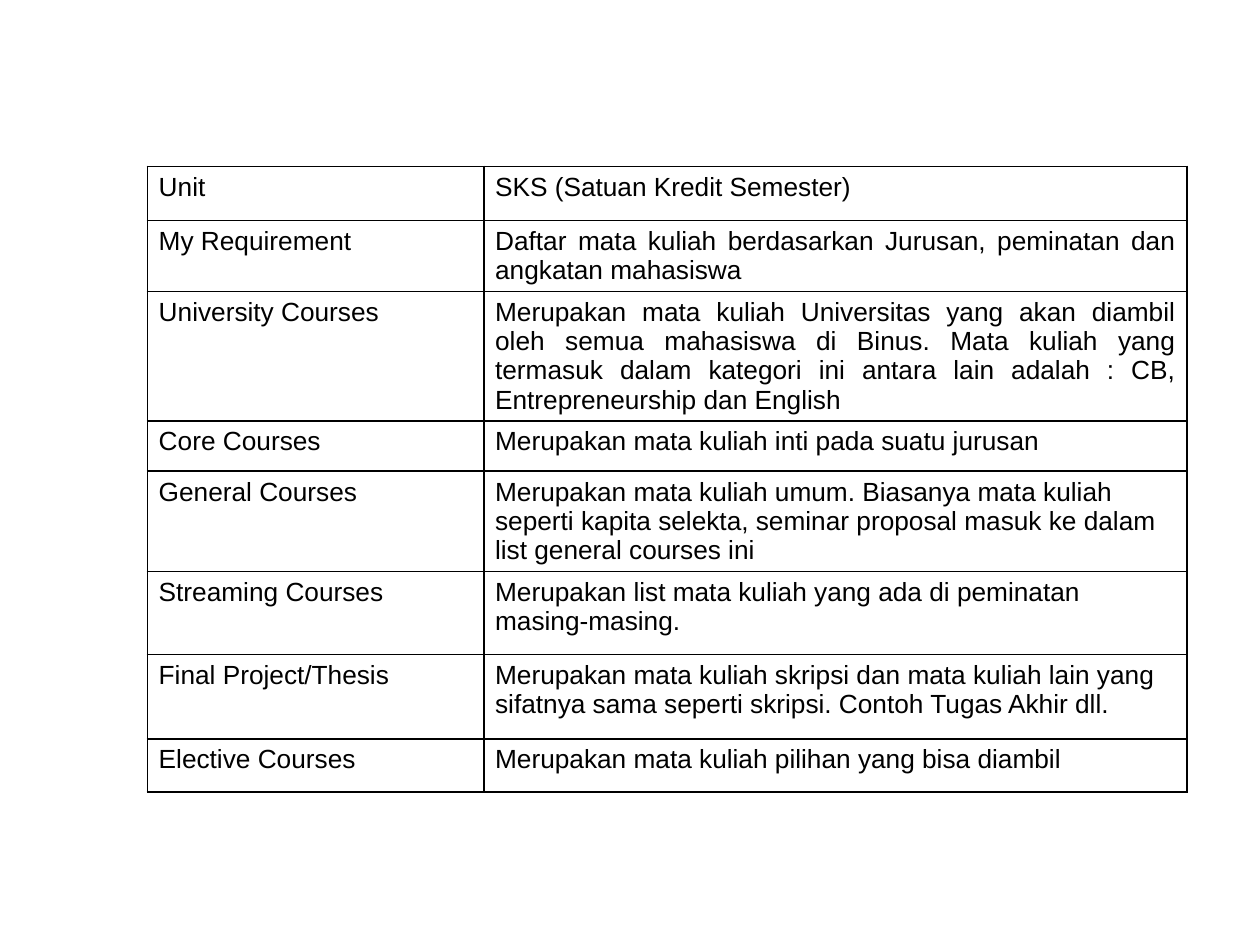
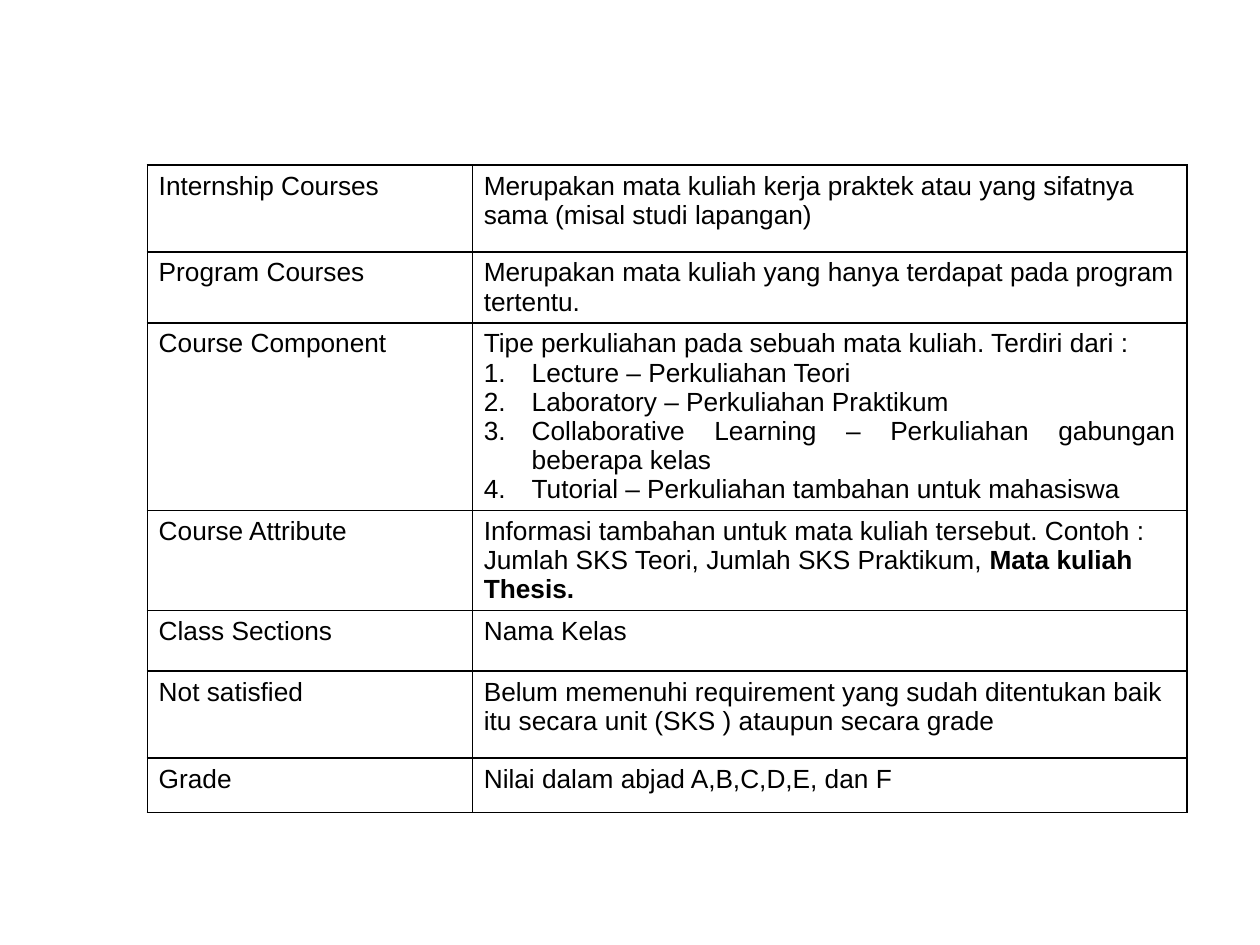
"""Builds two slides of a glossary of course registration terms."""
from lxml import etree
from pptx import Presentation
from pptx.dml.color import RGBColor
from pptx.enum.text import PP_ALIGN
from pptx.oxml.ns import qn
from pptx.util import Inches, Pt

ALIGN = {"L": PP_ALIGN.LEFT, "J": PP_ALIGN.JUSTIFY}
FONT, SIZE, INK = "Arial", 15, "000000"
LEFT, WIDTH = 1.17, 8.25


def color(code):
    return RGBColor.from_string(code)


def border(cell):
    props = cell._tc.get_or_add_tcPr()
    for side in ("lnL", "lnR", "lnT", "lnB"):
        line = etree.SubElement(props, qn("a:" + side), w=str(Pt(1)))
        fill = etree.SubElement(line, qn("a:solidFill"))
        etree.SubElement(fill, qn("a:srgbClr"), val=INK)


# Each row: height, alignment of term and meaning, term, then meaning as
# paragraphs of runs, where every second run is bold.
terms = [
    (0.43, "LL", "Unit", [["SKS (Satuan Kredit Semester)"]]),
    (0.42, "JJ", "My Requirement", [[
        "Daftar mata kuliah berdasarkan Jurusan, peminatan dan angkatan mahasiswa"]]),
    (0.67, "JJ", "University Courses", [[
        "Merupakan mata kuliah Universitas yang akan diambil oleh semua mahasiswa "
        "di Binus. Mata kuliah yang termasuk dalam kategori ini antara lain "
        "adalah : CB, Entrepreneurship dan English"]]),
    (0.4, "JJ", "Core Courses", [["Merupakan mata kuliah inti pada suatu jurusan"]]),
    (0.45, "JL", "General Courses", [[
        "Merupakan mata kuliah umum. Biasanya mata kuliah seperti kapita selekta, "
        "seminar proposal masuk ke dalam list general courses ini"]]),
    (0.66, "JL", "Streaming Courses", [[
        "Merupakan list mata kuliah yang ada di peminatan masing-masing."]]),
    (0.67, "LL", "Final Project/Thesis", [[
        "Merupakan mata kuliah skripsi dan mata kuliah lain yang sifatnya sama "
        "seperti skripsi. Contoh Tugas Akhir dll."]]),
    (0.42, "LL", "Elective Courses", [["Merupakan mata kuliah pilihan yang bisa diambil"]]),
]
more = [
    (0.69, "LL", "Internship Courses", [[
        "Merupakan mata kuliah kerja praktek atau yang sifatnya sama "
        "(misal studi lapangan)"]]),
    (0.5, "LL", "Program Courses", [[
        "Merupakan mata kuliah yang hanya terdapat pada program tertentu."]]),
    (0.62, "LJ", "Course Component", [
        ["Tipe perkuliahan pada sebuah mata kuliah. Terdiri dari :"],
        ["Lecture – Perkuliahan Teori"],
        ["Laboratory – Perkuliahan Praktikum"],
        ["Collaborative Learning – Perkuliahan gabungan beberapa kelas"],
        ["Tutorial – Perkuliahan tambahan untuk mahasiswa"]]),
    (0.69, "LL", "Course Attribute", [[
        "Informasi tambahan untuk mata kuliah tersebut. Contoh : "
        "Jumlah SKS Teori, Jumlah SKS Praktikum, ", "Mata kuliah Thesis."]]),
    (0.48, "LL", "Class Sections", [["Nama Kelas"]]),
    (0.69, "LL", "Not satisfied", [[
        "Belum memenuhi requirement yang sudah ditentukan baik itu secara unit "
        "(SKS ) ataupun secara grade"]]),
    (0.43, "LL", "Grade", [["Nilai dalam abjad A,B,C,D,E, dan F"]]),
]

deck = Presentation()
deck.slide_width, deck.slide_height = Inches(10), Inches(7.5)

for top, split, rows in ((1.32, 2.67, terms), (1.31, 2.58, more)):
    slide = deck.slides.add_slide(deck.slide_layouts[6])
    height = sum(row[0] for row in rows)
    table = slide.shapes.add_table(len(rows), 2, Inches(LEFT), Inches(top),
                                   Inches(WIDTH), Inches(height)).table
    table.first_row = table.horz_banding = False
    table.columns[0].width = Inches(split)
    table.columns[1].width = Inches(WIDTH - split)
    for i, (high, sides, term, meaning) in enumerate(rows):
        table.rows[i].height = Inches(high)
        for j, paras in enumerate(([[term]], meaning)):
            cell = table.cell(i, j)
            border(cell)
            cell.fill.background()
            cell.margin_left = cell.margin_right = Inches(0.09)
            cell.margin_top = cell.margin_bottom = Inches(0.05)
            frame = cell.text_frame
            for k, runs in enumerate(paras):
                para = frame.add_paragraph() if k else frame.paragraphs[0]
                para.alignment = ALIGN[sides[j]]
                if k:
                    props = para._p.get_or_add_pPr()
                    props.set("marL", str(Inches(0.38)))
                    props.set("indent", str(-Inches(0.38)))
                    etree.SubElement(props, qn("a:buFont"), typeface="+mj-lt")
                    etree.SubElement(props, qn("a:buAutoNum"), type="arabicPeriod")
                for n, text in enumerate(runs):
                    run = para.add_run()
                    run.text = text
                    run.font.name, run.font.size = FONT, Pt(SIZE)
                    run.font.bold = n % 2 == 1
                    run.font.color.rgb = color(INK)

deck.save("out.pptx")
